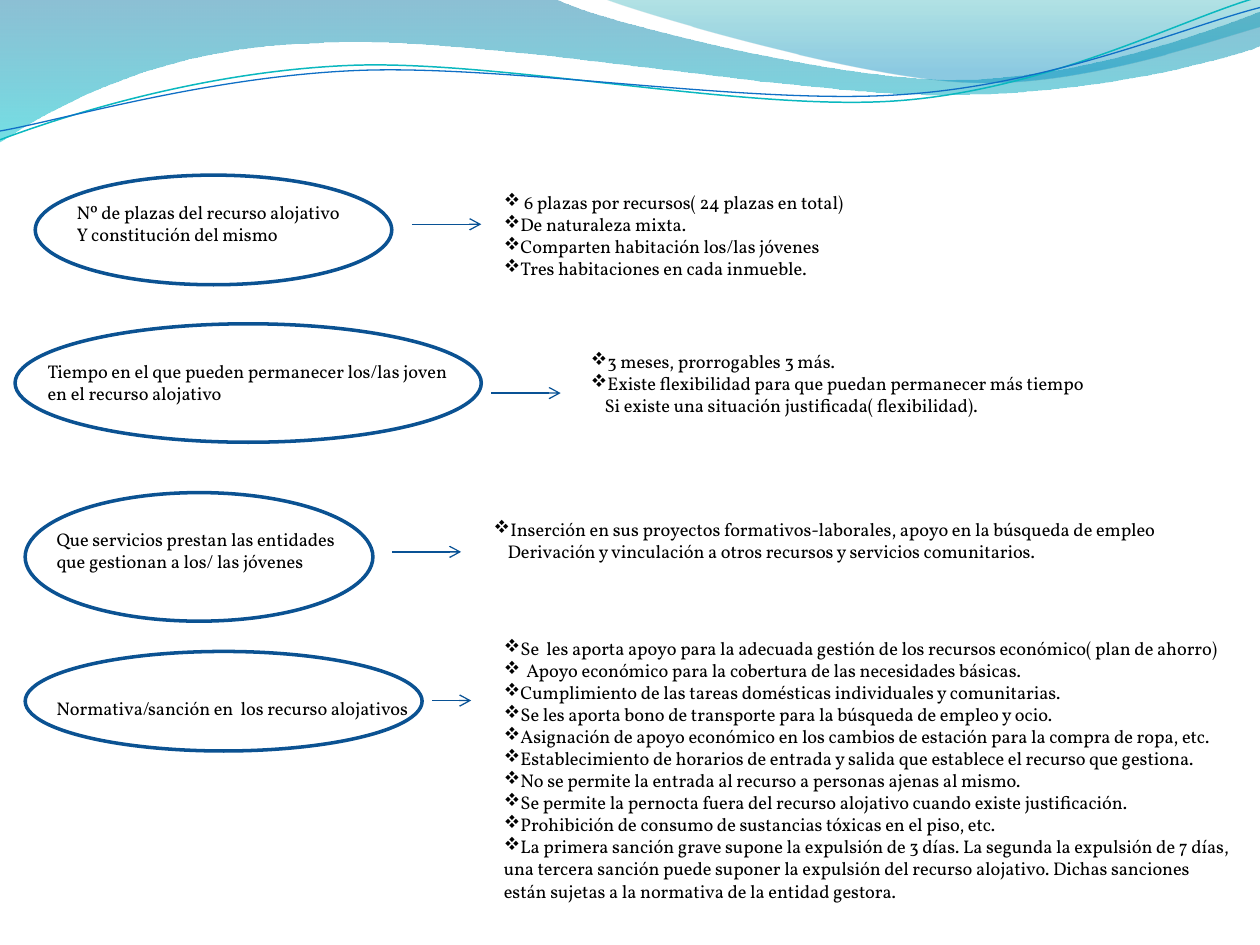
from pptx import Presentation
from pptx.dml.color import RGBColor
from pptx.enum.shapes import MSO_CONNECTOR, MSO_SHAPE
from pptx.enum.text import MSO_ANCHOR, PP_ALIGN
from pptx.oxml.ns import qn
from pptx.oxml.xmlchemy import OxmlElement
from pptx.util import Inches, Pt

OVAL = MSO_SHAPE.OVAL
STRAIGHT = MSO_CONNECTOR.STRAIGHT
LEFT = PP_ALIGN.LEFT
TOP = MSO_ANCHOR.TOP

COLORS = {
    "text": "000000", "ring": "0B5292", "arrow": "095295",
    "teal": "0AB8BF", "blue": "0F6FC6",
    "deep": "0074A1", "aqua": "00C6CF", "sea": "00A1A9", "sky": "008BBF",
}

# Each wave is a start point, then (x, y) lines and six-number curves.
# Gradient stops are (place, colour, opacity in percent).
BANDS = [
    ([(0, 0), (4.4, -0.01), (4.76, 0.17, 6.64, 0.63, 7.58, 0.63),
      (8.53, 0.63, 9.58, 0.26, 10, 0.09), (10.01, 0.36),
      (9.83, 0.44, 8.7, 0.76, 7.46, 0.75), (6.22, 0.75, 3.82, 0.28, 2.57, 0.34),
      (1.29, 0.36, 0.46, 0.83, -0.01, 1.13), (0, 0)],
     [(0, "deep", 45), (1, "aqua", 55)]),
    ([(4.79, -0.01), (5.09, 0.11, 6.82, 0.62, 7.69, 0.65),
      (8.56, 0.69, 9.61, 0.32, 10, 0.21), (10, 0), (4.79, -0.01)],
     [(0, "sea", 30), (0.8, "sky", 45)]),
]
STREAKS = [
    ([(0, 1.11), (0.48, 0.93, 1.58, 0.57, 2.77, 0.52),
      (3.95, 0.47, 5.93, 0.89, 7.13, 0.8), (8.33, 0.71, 9.38, 0.15, 9.98, -0.02)],
     "teal", 0.85),
    ([(0, 1.04), (0.47, 0.96, 1.64, 0.61, 2.83, 0.56),
      (4.03, 0.51, 5.97, 0.84, 7.17, 0.75), (8.36, 0.67, 9.41, 0.21, 10, 0.06)],
     "blue", 0.75),
]

# Answer lines are (text, has bullet, left margin in inches).
TOPICS = [
    {"label": (0.51, 1.55, 2.31, 0.45),
     "lines": ["Nº de plazas del recurso alojativo", "Y constitución del mismo"],
     "ring": (0.28, 1.39, 2.83, 0.87),
     "arrow": (3.27, 3.82, 1.78),
     "box": (3.9, 1.47, 2.96, 0.81),
     "answer": [
         (" 6 plazas por recursos( 24 plazas en total)", True, 0),
         ("De naturaleza mixta.", True, 0),
         ("Comparten habitación los/las jóvenes", True, 0),
         ("Tres habitaciones en cada inmueble.", True, 0)]},
    {"label": (0.28, 2.81, 3.56, 0.45),
     "lines": ["Tiempo en el que pueden permanecer los/las joven",
               "en el recurso alojativo"],
     "ring": (0.12, 2.57, 3.7, 0.94),
     "arrow": (3.9, 4.45, 3.12),
     "box": (4.59, 2.73, 4.18, 0.63),
     "answer": [
         ("3 meses, prorrogables 3 más.", True, 0),
         ("Existe flexibilidad para que puedan permanecer más tiempo", True, 0),
         ("Si existe una situación justificada( flexibilidad).", False, 0.11)]},
    {"label": (0.35, 4.14, 2.48, 0.76),
     "lines": ["Que servicios prestan las entidades", "que gestionan a los/ las jóvenes"],
     "ring": (0.2, 3.91, 2.76, 1.02),
     "arrow": (3.11, 3.66, 4.38),
     "box": (3.82, 4.06, 5.51, 0.45),
     "answer": [
         ("Inserción en sus proyectos formativos-laborales, apoyo en la búsqueda de empleo",
          True, 0),
         ("Derivación y vinculación a otros recursos y servicios comunitarios.",
          False, 0.11)]},
    {"label": (0.35, 5.48, 3.03, 0.28),
     "lines": ["Normativa/sanción en  los recurso alojativos"],
     "ring": (0.2, 5.17, 3.15, 0.79),
     "arrow": (3.43, 3.74, 5.56),
     "box": (3.9, 5.01, 5.99, 2.2),
     "wrap": True,
     "answer": [
         ("Se  les aporta apoyo para la adecuada gestión de los recursos económico"
          "( plan de ahorro)", True, 0),
         ("Apoyo económico para la cobertura de las necesidades básicas.", True, 0.18),
         ("Cumplimiento de las tareas domésticas individuales y comunitarias.", True, 0),
         ("Se les aporta bono de transporte para la búsqueda de empleo y ocio.", True, 0),
         ("Asignación de apoyo económico en los cambios de estación para la compra "
          "de ropa, etc.", True, 0),
         ("Establecimiento de horarios de entrada y salida que establece el recurso "
          "que gestiona.", True, 0),
         ("No se permite la entrada al recurso a personas ajenas al mismo.", True, 0),
         ("Se permite la pernocta fuera del recurso alojativo cuando existe "
          "justificación.", True, 0),
         ("Prohibición de consumo de sustancias tóxicas en el piso, etc.", True, 0),
         ("La primera sanción grave supone la expulsión de 3 días. La segunda la "
          "expulsión de 7 días, una tercera sanción puede suponer la expulsión del "
          "recurso alojativo. Dichas sanciones están sujetas a la normativa de la "
          "entidad gestora.", True, 0)]},
]


def color(name):
    return RGBColor.from_string(COLORS[name])


def node(tag, **values):
    item = OxmlElement(tag)
    for key, value in values.items():
        item.set(key, str(value))
    return item


class Page:
    font = "Vollkorn"
    size = Pt(10.5)
    mark = {"typeface": "Wingdings"}, {"char": "v"}

    def __init__(self, slide):
        self.shapes = slide.shapes

    def wave(self, parts, close):
        """Draw all points as lines, then join each curve's three into one."""
        pairs = [(Inches(part[i]), Inches(part[i + 1]))
                 for part in parts for i in range(0, len(part), 2)]
        pen = self.shapes.build_freeform(*pairs[0])
        pen.add_line_segments(pairs[1:], close=close)
        shape = pen.convert_to_shape()
        shape.shadow.inherit = False
        lines = iter(list(shape._element.spPr.iter(qn("a:lnTo"))))
        for part in parts[1:]:
            first = next(lines)
            if len(part) == 6:
                curve = node("a:cubicBezTo")
                first.addprevious(curve)
                for line in (first, next(lines), next(lines)):
                    curve.append(line[0])
                    line.getparent().remove(line)
        return shape

    def band(self, parts, stops):
        shape = self.wave(parts, True)
        shape.line.fill.background()
        fill = shape.fill
        fill.gradient()
        fill.gradient_angle = 270
        for stop, (place, name, _) in zip(fill.gradient_stops, stops):
            stop.position = place
            stop.color.rgb = color(name)
        tints = shape._element.spPr.iter(qn("a:srgbClr"))
        for tint, (_, _, level) in zip(tints, stops):
            tint.append(node("a:alpha", val=level * 1000))

    def streak(self, parts, name, width):
        shape = self.wave(parts, False)
        shape.fill.background()
        shape.line.color.rgb = color(name)
        shape.line.width = Pt(width)

    def ring(self, box):
        shape = self.shapes.add_shape(OVAL, *map(Inches, box))
        shape.shadow.inherit = False
        shape.fill.background()
        shape.line.color.rgb = color("ring")
        shape.line.width = Pt(2)

    def arrow(self, start, end, y):
        line = self.shapes.add_connector(
            STRAIGHT, Inches(start), Inches(y), Inches(end), Inches(y))
        line.line.color.rgb = color("arrow")
        line.line.width = Pt(0.75)
        props = line._element.spPr
        props.find(qn("a:ln")).append(node("a:tailEnd", type="arrow"))
        props.append(node("a:effectLst"))

    def text(self, box, lines, wrap=False):
        frame = self.shapes.add_textbox(*map(Inches, box)).text_frame
        frame.word_wrap = wrap
        frame.vertical_anchor = TOP
        for i, (words, bullet, margin) in enumerate(lines):
            para = frame.add_paragraph() if i else frame.paragraphs[0]
            para.alignment = LEFT
            props = para._p.get_or_add_pPr()
            props.set("marL", str(Inches(margin)))
            if bullet:
                props.set("indent", str(-Inches(margin)))
                face, sign = self.mark
                props.append(node("a:buFont", **face))
                props.append(node("a:buChar", **sign))
            run = para.add_run()
            run.text = words
            run.font.name = self.font
            run.font.size = self.size
            run.font.color.rgb = color("text")


def main():
    deck = Presentation()
    deck.slide_width, deck.slide_height = Inches(10), Inches(7.5)
    page = Page(deck.slides.add_slide(deck.slide_layouts[6]))
    for band in BANDS:
        page.band(*band)
    for streak in STREAKS:
        page.streak(*streak)
    for topic in TOPICS:
        page.text(topic["label"], [(line, False, 0) for line in topic["lines"]])
        page.ring(topic["ring"])
        page.arrow(*topic["arrow"])
        page.text(topic["box"], topic["answer"], topic.get("wrap", False))
    deck.save("out.pptx")


if __name__ == "__main__":
    main()
